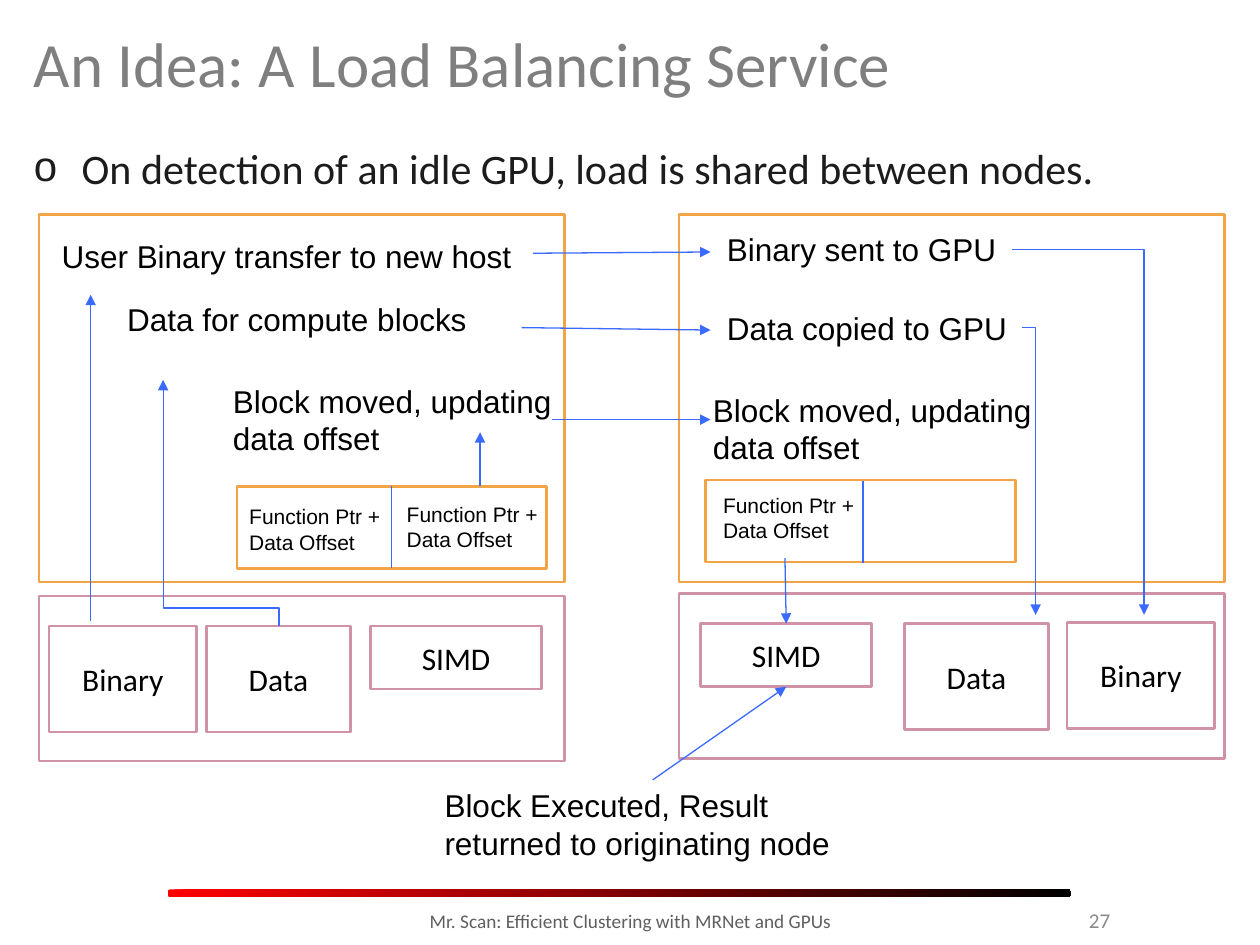
from typing import NamedTuple

from pptx import Presentation
from pptx.dml.color import RGBColor
from pptx.enum.shapes import MSO_CONNECTOR, MSO_SHAPE
from pptx.enum.text import MSO_ANCHOR, MSO_AUTO_SIZE, PP_ALIGN
from pptx.oxml.ns import qn
from pptx.shapes.autoshape import Shape
from pptx.shapes.connector import Connector
from pptx.slide import Slide
from pptx.util import Inches, Pt

WHITE = RGBColor(0xFF, 0xFF, 0xFF)
BLACK = RGBColor(0, 0, 0)
RED = RGBColor(0xFF, 0, 0)
ORANGE = RGBColor(0xF3, 0xA4, 0x47)
PINK = RGBColor(0xD0, 0x92, 0xA7)
BLUE = RGBColor(0x3B, 0x6A, 0xFF)
TITLE_GRAY = RGBColor(0x7F, 0x7F, 0x7F)
BODY_GRAY = RGBColor(0x1C, 0x1C, 0x1C)
NUMBER_GRAY = RGBColor(0x89, 0x89, 0x89)
FOOTER_GRAY = RGBColor(0x5F, 0x5F, 0x5F)


class Box(NamedTuple):
    left: float
    top: float
    width: float
    height: float
    color: RGBColor
    text: str = ""


class Label(NamedTuple):
    text: str
    left: float
    top: float
    width: float
    height: float
    size: float = 18
    font: str = "Arial"
    color: RGBColor = BLACK
    align: PP_ALIGN = PP_ALIGN.LEFT
    anchor: MSO_ANCHOR = MSO_ANCHOR.TOP
    wrap: bool = True


class Line(NamedTuple):
    start: tuple[float, float]
    end: tuple[float, float]
    arrow: bool = True


MOVED = "Block moved, updating data offset"
POINTER = "Function Ptr + Data Offset"

PANELS = [
    Box(0.31, 1.7, 4.17, 2.92, ORANGE),
    Box(5.39, 1.7, 4.33, 2.92, ORANGE),
    Box(1.88, 3.86, 2.46, 0.65, ORANGE),
    Box(5.6, 3.81, 2.46, 0.65, ORANGE),
    Box(0.31, 4.73, 4.17, 1.31, PINK),
    Box(5.39, 4.71, 4.33, 1.31, PINK),
    Box(0.39, 4.97, 1.17, 0.84, PINK, "Binary"),
    Box(1.64, 4.97, 1.14, 0.84, PINK, "Data"),
    Box(2.94, 4.97, 1.36, 0.5, PINK, "SIMD"),
    Box(8.47, 4.94, 1.17, 0.84, PINK, "Binary"),
    Box(7.18, 4.95, 1.14, 0.84, PINK, "Data"),
]
TARGET_SIMD = Box(5.56, 4.95, 1.36, 0.5, PINK, "SIMD")

PAGE_LABELS = [
    Label("An Idea: A Load Balancing Service", 0.17, 0.08, 9.67, 0.83, 36,
          "Calibri", TITLE_GRAY, anchor=MSO_ANCHOR.MIDDLE),
    Label("27", 7.58, 7.1, 1.33, 0.4, 12, "Calibri", NUMBER_GRAY,
          PP_ALIGN.RIGHT, MSO_ANCHOR.MIDDLE),
    Label("Mr. Scan: Efficient Clustering with MRNet and GPUs", 2.42, 7.17,
          5.17, 0.4, 11, "Calibri", FOOTER_GRAY, PP_ALIGN.CENTER),
]
BULLET = Label("On detection of an idle GPU, load is shared between nodes.",
               0.17, 1.08, 9.58, 5.67, 24, "Calibri", BODY_GRAY)
STEP_LABELS = [
    Label("User Binary transfer to new host", 0.39, 1.83, 3.81, 0.4, wrap=False),
    Label("Data for compute blocks", 0.91, 2.33, 3.51, 0.4),
    Label(MOVED, 1.75, 2.98, 2.91, 0.71),
    Label("Binary sent to GPU", 5.67, 1.78, 2.36, 0.4, wrap=False),
    Label("Data copied to GPU", 5.67, 2.4, 2.45, 0.4, wrap=False),
    Label(MOVED, 5.56, 3.05, 2.91, 0.71),
    Label(POINTER, 1.88, 3.95, 1.44, 0.5, 12),
    Label(POINTER, 3.13, 3.93, 1.44, 0.5, 12),
    Label(POINTER, 5.64, 3.86, 1.44, 0.5, 12),
]
RESULT = Label("Block Executed, Result returned to originating node",
               3.43, 6.19, 3.5, 0.71)

LINES = [
    Line((3.11, 3.86), (3.11, 4.51), arrow=False),
    Line((6.85, 3.82), (6.85, 4.47), arrow=False),
    Line((0.72, 4.93), (0.72, 2.34)),
    Line((3.81, 3.86), (3.81, 3.43)),
    Line((4.23, 2.01), (5.64, 2)),
    Line((4.14, 2.6), (5.64, 2.62)),
    Line((4.38, 3.33), (5.64, 3.33)),
]
CORNERS = [Line((8.03, 1.98), (9.08, 4.88)), Line((8.11, 2.6), (8.22, 4.88))]
SIMD_ARROW = Line((6.23, 4.43), (6.24, 4.95))
RESULT_ARROW = Line((5.18, 6.19), (6.24, 5.45))


def style_text(shape: Shape, text: str, size: float, font: str,
               color: RGBColor, align: PP_ALIGN, anchor: MSO_ANCHOR) -> None:
    frame = shape.text_frame
    frame.text = text
    frame.vertical_anchor = anchor
    para = frame.paragraphs[0]
    para.alignment = align
    for span in para.runs:
        span.font.size = Pt(size)
        span.font.name = font
        span.font.color.rgb = color


def add_box(page: Slide, box: Box) -> Shape:
    shape = page.shapes.add_shape(MSO_SHAPE.RECTANGLE, *map(Inches, box[:4]))
    shape.shadow.inherit = False
    shape.fill.solid()
    shape.fill.fore_color.rgb = WHITE
    shape.line.color.rgb = box.color
    shape.line.width = Pt(1.5)
    if box.text:
        style_text(shape, box.text, 18, "Calibri", BLACK,
                   PP_ALIGN.CENTER, MSO_ANCHOR.MIDDLE)
    return shape


def add_label(page: Slide, label: Label, grow: bool = False) -> Shape:
    shape = page.shapes.add_textbox(*map(Inches, label[1:5]))
    shape.text_frame.word_wrap = label.wrap
    if grow:
        shape.text_frame.auto_size = MSO_AUTO_SIZE.SHAPE_TO_FIT_TEXT
    style_text(shape, label.text, label.size, label.font, label.color,
               label.align, label.anchor)
    return shape


def add_bullet(page: Slide, label: Label) -> None:
    para = add_label(page, label).text_frame.paragraphs[0]
    properties = para._p.get_or_add_pPr()
    properties.set("marL", str(Inches(0.38)))
    properties.set("indent", str(Inches(-0.38)))
    font = properties.makeelement(qn("a:buFont"), {"typeface": "Arial"})
    mark = properties.makeelement(qn("a:buChar"), {"char": "o"})
    properties.extend([font, mark])


def add_line(page: Slide, line: Line,
             kind: MSO_CONNECTOR = MSO_CONNECTOR.STRAIGHT) -> Connector:
    connector = page.shapes.add_connector(
        kind, *map(Inches, line.start + line.end))
    connector.line.color.rgb = BLUE
    connector.line.width = Pt(0.75)
    if line.arrow:
        outline = connector.line._get_or_add_ln()
        outline.append(outline.makeelement(qn("a:tailEnd"), {"type": "triangle"}))
    properties = connector._element.spPr
    properties.append(properties.makeelement(qn("a:effectLst"), {}))
    return connector


def add_corner(page: Slide, line: Line) -> None:
    connector = add_line(page, line, MSO_CONNECTOR.ELBOW)
    connector._element.spPr.find(qn("a:prstGeom")).set("prst", "bentConnector2")


def add_data_riser(page: Slide) -> None:
    """Up from the Data box, left, then up to the data label."""
    connector = add_line(page, Line((0.78, 4.45), (2.73, 3.53)), MSO_CONNECTOR.ELBOW)
    connector.rotation = 270
    geometry = connector._element.spPr.find(qn("a:prstGeom"))
    adjustments = geometry.get_or_add_avLst()
    adjustments.append(adjustments.makeelement(
        qn("a:gd"), {"name": "adj1", "fmla": "val 7200"}))


def add_footer_bar(page: Slide) -> None:
    bar = page.shapes.add_shape(MSO_SHAPE.ROUNDED_RECTANGLE,
                                *map(Inches, (1.33, 7.06, 7.17, 0.06)))
    bar.adjustments[0] = 0.33
    bar.shadow.inherit = False
    bar.line.fill.background()
    bar.fill.gradient()
    bar.fill.gradient_angle = 0
    for stop, color, position in zip(bar.fill.gradient_stops, (RED, BLACK), (0, 1)):
        stop.color.rgb = color
        stop.position = position


def main() -> None:
    deck = Presentation()
    deck.slide_width, deck.slide_height = Inches(10), Inches(7.5)
    page = deck.slides.add_slide(deck.slide_layouts[6])

    # Title, bullet and footer
    add_footer_bar(page)
    for label in PAGE_LABELS:
        add_label(page, label)
    add_bullet(page, BULLET)

    # Hosts, GPUs and their contents
    for box in PANELS:
        add_box(page, box)
    simd = add_box(page, TARGET_SIMD)
    for label in STEP_LABELS:
        add_label(page, label, grow=True)
    result = add_label(page, RESULT, grow=True)

    # Dividers and transfers
    for line in LINES:
        add_line(page, line)
    for line in CORNERS:
        add_corner(page, line)
    add_data_riser(page)
    add_line(page, SIMD_ARROW).end_connect(simd, 0)
    result_arrow = add_line(page, RESULT_ARROW)
    result_arrow.begin_connect(result, 0)
    result_arrow.end_connect(simd, 2)

    deck.save("out.pptx")


if __name__ == "__main__":
    main()
